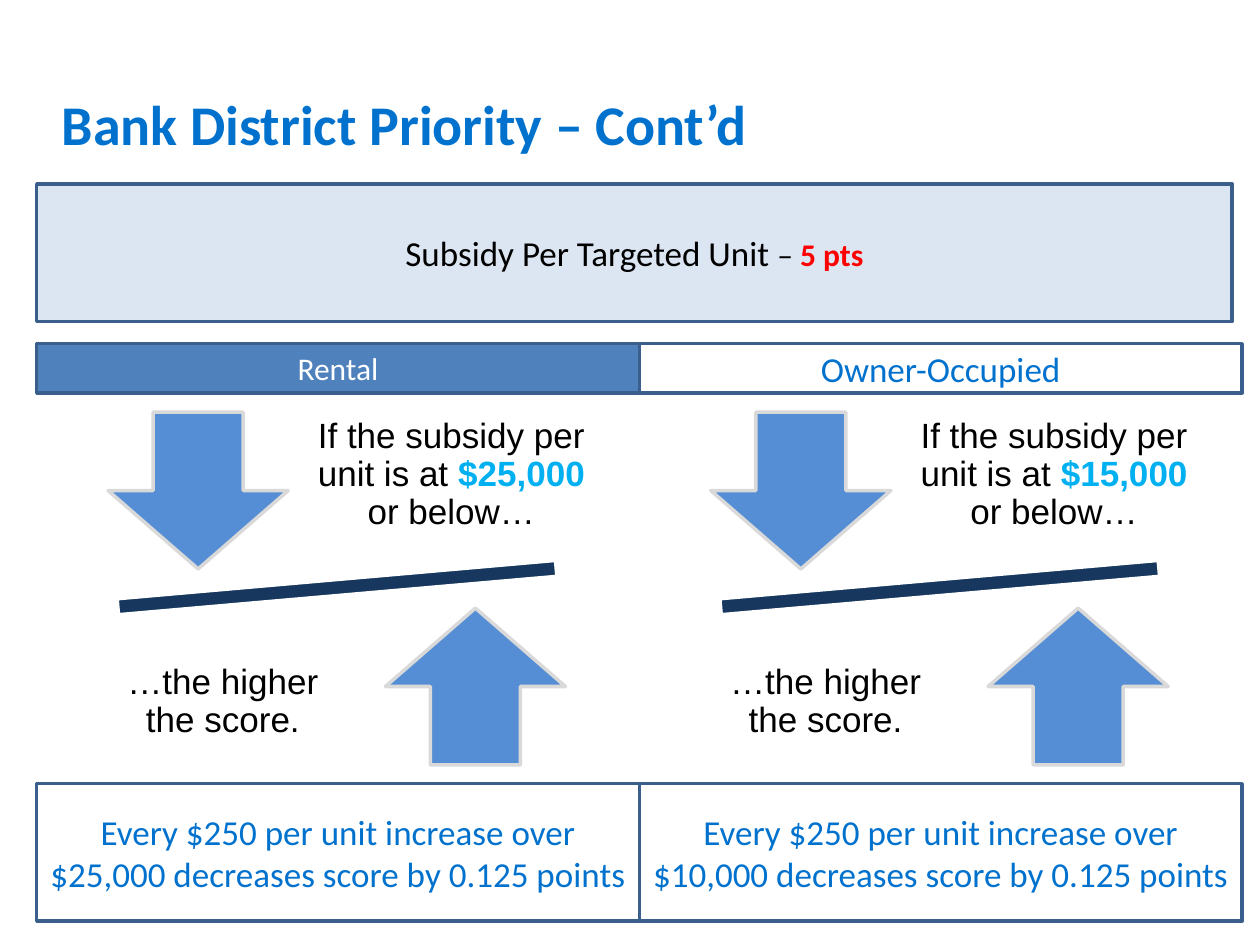
from pptx import Presentation
from pptx.dml.color import RGBColor
from pptx.enum.shapes import MSO_SHAPE as Shape
from pptx.enum.text import MSO_ANCHOR as Anchor, PP_ALIGN as Align
from pptx.util import Cm, Pt

BLUE, BLACK, WHITE = "0072CE", "000000", "FFFFFF"
OUTLINE, ARROW, ARROW_LINE, BAR = "3A5F8C", "558ED5", "D9D9D9", "17375E"

TITLE = "Bank District Priority – Cont’d"
# Each span: text, size, colour, bold
BANNER = [
    ("Subsidy Per Targeted Unit ", 20, BLACK, False),
    ("– ", 18, BLACK, False),
    ("5 pts", 18, "FF0000", True),
]
COLUMNS = [
    {"heading": "Rental", "size": 18, "colour": WHITE, "fill": "4F81BD",
     "limit": "$25,000", "base": "$25,000"},
    {"heading": "Owner-Occupied", "size": 20, "colour": BLUE, "fill": WHITE,
     "limit": "$15,000", "base": "$10,000"},
]
LEFT, COLUMN_WIDTH = 0.74, 12.15
ARROW_SIZE = (3.63, 3.16)


def paint(colour_format, colour):
    colour_format.rgb = RGBColor.from_string(colour)


def write(frame, spans, font="Calibri", align=Align.CENTER, anchor=Anchor.MIDDLE,
          inset=None, line_spacing=None):
    frame.word_wrap = True
    frame.vertical_anchor = anchor
    if inset is not None:
        frame.margin_left = frame.margin_right = Cm(inset)
        frame.margin_top = frame.margin_bottom = Cm(inset)
    para = frame.paragraphs[0]
    para.alignment = align
    para.space_before = Pt(0)
    if line_spacing:
        para.line_spacing = line_spacing
    for text, size, colour, bold in spans:
        span = para.add_run()
        span.text = text
        span.font.name, span.font.size, span.font.bold = font, Pt(size), bold
        paint(span.font.color, colour)


def add_shape(kind, left, top, width, height, fill, line, rotation=0):
    shape = slide.shapes.add_shape(kind, Cm(left), Cm(top), Cm(width), Cm(height))
    shape.shadow.inherit = False
    shape.rotation = rotation
    shape.fill.solid()
    paint(shape.fill.fore_color, fill)
    paint(shape.line.color, line)
    shape.line.width = Pt(2)
    return shape


def add_panel(left, top, width, height, spans, fill=WHITE, kind=Shape.FLOWCHART_PROCESS):
    panel = add_shape(kind, left, top, width, height, fill, OUTLINE)
    write(panel.text_frame, spans)


def add_note(left, top, width, height, spans):
    box = slide.shapes.add_textbox(Cm(left), Cm(top), Cm(width), Cm(height))
    write(box.text_frame, spans, font="Arial", inset=0.41, line_spacing=0.9)


def add_balance(left, limit):
    """Draw the two opposed arrows, the tilted bar and their notes."""
    add_shape(Shape.MATH_MINUS, left + 0.02, 11.16, 12.07, 1.37, BAR, WHITE, rotation=355)
    add_shape(Shape.DOWN_ARROW, left + 1.44, 8.31, *ARROW_SIZE, ARROW, ARROW_LINE)
    add_note(left + 4.93, 8.41, 6.86, 2.34, [
        ("If the subsidy per unit is at ", 20, BLACK, False),
        (limit + " ", 20, "00B0F0", True),
        ("or below…", 20, BLACK, False),
    ])
    add_shape(Shape.UP_ARROW, left + 7.03, 12.26, *ARROW_SIZE, ARROW, ARROW_LINE)
    add_note(left + 1.38, 13.27, 4.75, 1.77, [("…the higher the score.", 20, BLACK, False)])


deck = Presentation()
deck.slide_width, deck.slide_height = Cm(25.4), Cm(19.05)
slide = deck.slides.add_slide(deck.slide_layouts[5])

title = slide.shapes.title
title.left, title.top, title.width, title.height = Cm(0.99), Cm(1.68), Cm(20.8), Cm(1.6)
write(title.text_frame, [(TITLE, 32, BLUE, True)], align=Align.LEFT, anchor=Anchor.TOP)

add_panel(LEFT, 3.71, 24.1, 2.77, BANNER, fill="DCE6F2")
for index, column in enumerate(COLUMNS):
    left = LEFT + index * COLUMN_WIDTH
    rule = f"Every $250 per unit increase over {column['base']} decreases score by 0.125 points"
    add_balance(left, column["limit"])
    add_panel(left, 15.8, COLUMN_WIDTH, 2.77, [(rule, 20, BLUE, False)])
    add_panel(left, 6.93, COLUMN_WIDTH, 0.99,
              [(column["heading"], column["size"], column["colour"], False)],
              fill=column["fill"], kind=Shape.RECTANGLE if index == 0 else Shape.FLOWCHART_PROCESS)

deck.save("out.pptx")
